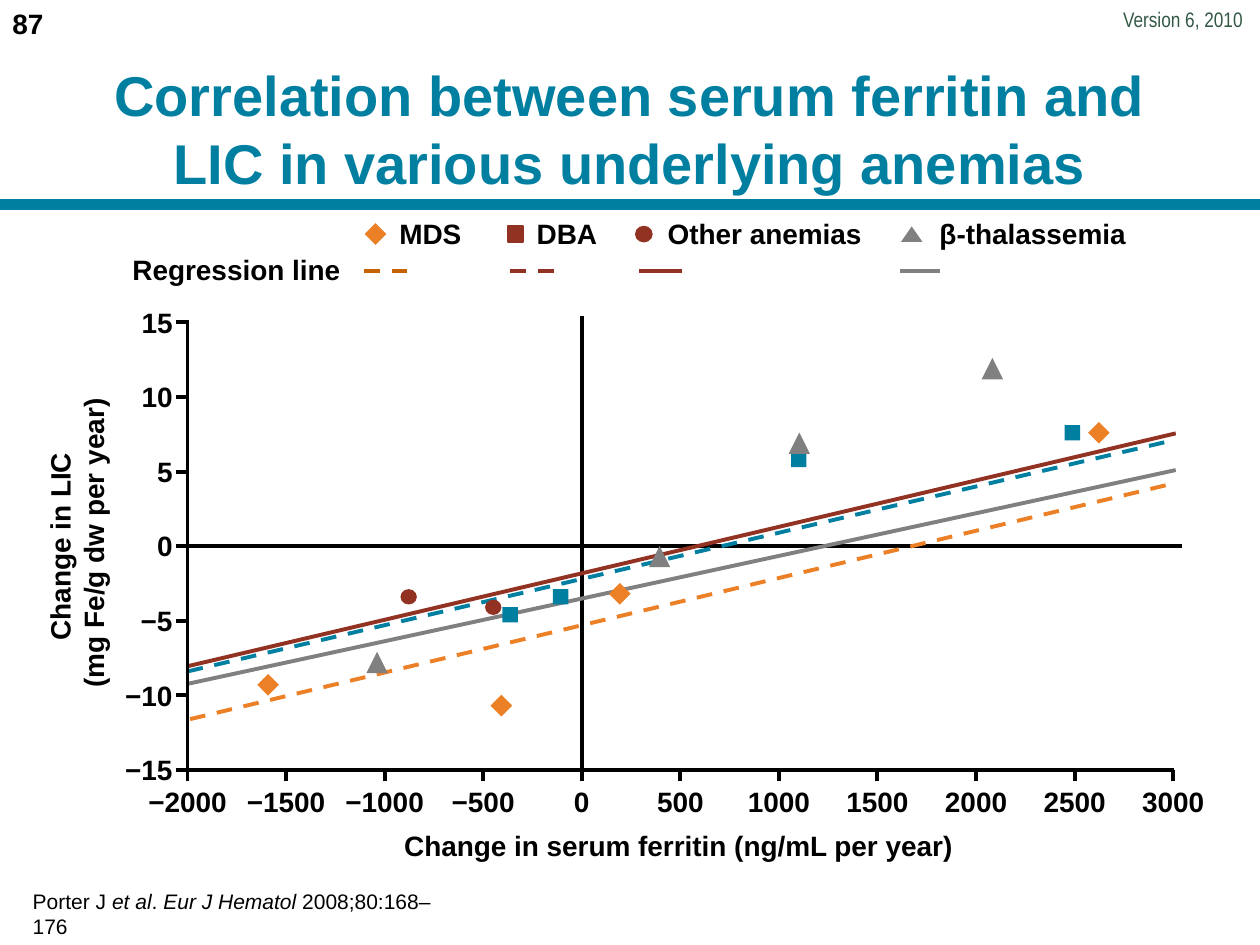
"""Build a slide relating changes in serum ferritin and LIC across anemias."""
import pptx
import pptx.util
from pptx.dml.color import RGBColor
from pptx.enum.dml import MSO_LINE
from pptx.enum.shapes import MSO_CONNECTOR, MSO_SHAPE
from pptx.enum.text import MSO_ANCHOR, MSO_AUTO_SIZE, PP_ALIGN
from pptx.oxml import parse_xml

Cm, Pt = pptx.util.Cm, pptx.util.Pt

TEAL = RGBColor(0x00, 0x7F, 0xA1)
ORANGE = RGBColor(0xEC, 0x80, 0x26)
OCHRE = RGBColor(0xC6, 0x62, 0x00)
BROWN = RGBColor(0x92, 0x32, 0x22)
GRAY = RGBColor(0x80, 0x80, 0x80)
GREEN = RGBColor(0x32, 0x58, 0x44)
BLACK = RGBColor(0, 0, 0)
EFFECT_LIST = '<a:effectLst xmlns:a="http://schemas.openxmlformats.org/drawingml/2006/main"/>'

TITLE = "Correlation between serum ferritin and LIC in various underlying anemias"
CITATION = [("Porter J ", False), ("et al", True), (". ", False),
            ("Eur J Hematol", True), (" 2008;80:168–176", False)]

LEFT, RIGHT, TOP, BOTTOM = 3.78, 23.65, 6.5, 15.52
FERRITIN_MIN, FERRITIN_MAX, FERRITIN_STEP = -2000, 3000, 500
LIC_MIN, LIC_MAX, LIC_STEP = -15, 15, 5
TICK = 0.23
LABEL_HEIGHT = 0.69

MARKERS = {
    "DBA": (MSO_SHAPE.RECTANGLE, 0.31, 0.31, 0),
    "thalassemia": (MSO_SHAPE.ISOSCELES_TRIANGLE, 0.43, 0.43, 0),
    "MDS": (MSO_SHAPE.RECTANGLE, 0.31, 0.31, 45),
    "other": (MSO_SHAPE.OVAL, 0.33, 0.31, 0),
}
REGRESSIONS = [
    ((-2000, -8.4), (3000, 7.1), TEAL, True),
    ((-1987, -11.6), (3000, 4.2), ORANGE, True),
    ((-2006, -8.07), (3013, 7.56), BROWN, False),
    ((-2006, -9.25), (3013, 5.1), GRAY, False),
]
POINTS = [
    ("DBA", TEAL, [(-363, -4.6), (-107, -3.4), (1101, 5.8), (2489, 7.6)]),
    ("thalassemia", GRAY, [(2083, 11.9), (1104, 6.9), (395, -0.7), (-1038, -7.8)]),
    ("MDS", ORANGE, [(193, -3.2), (-408, -10.7), (-1591, -9.3), (2623, 7.6)]),
    ("other", BROWN, [(-878, -3.4), (-449, -4.1)]),
]
LEGEND_MARKER_Y, LEGEND_LABEL_TOP, LEGEND_LINE_Y = 4.72, 4.25, 5.46
LEGEND = [
    ("MDS", "MDS", 7.57, ORANGE, 0, 7.8, 2.2, (7.34, 8.43), OCHRE, True),
    ("DBA", "DBA", 10.39, BROWN, 1.25, 10.57, 2.2, (10.29, 11.38), BROWN, True),
    ("other", "Other anemias", 12.98, BROWN, 0.75, 13.21, 4.8, (12.88, 13.74), BROWN, False),
    ("thalassemia", "β-thalassemia", 18.38, GRAY, 0, 18.69, 4.8, (18.14, 18.95), GRAY, False),
]


def x_of(ferritin):
    return LEFT + (ferritin - FERRITIN_MIN) / (FERRITIN_MAX - FERRITIN_MIN) * (RIGHT - LEFT)


def y_of(lic):
    return BOTTOM - (lic - LIC_MIN) / (LIC_MAX - LIC_MIN) * (BOTTOM - TOP)


def signed(value):
    return str(value).replace("-", "−")


def add_line(slide, start, end, color=BLACK, dashed=False, width=2.25):
    line = slide.shapes.add_connector(
        MSO_CONNECTOR.STRAIGHT, *(Cm(length) for length in (*start, *end)))
    line.line.color.rgb = color
    line.line.width = Pt(width)
    if dashed:
        line.line.dash_style = MSO_LINE.DASH
    line._element.spPr.append(parse_xml(EFFECT_LIST))


def add_marker(slide, kind, x, y, color, outline=0, height=None):
    preset, width, full_height, rotation = MARKERS[kind]
    height = height or full_height
    shape = slide.shapes.add_shape(
        preset, Cm(x - width / 2), Cm(y - height / 2), Cm(width), Cm(height))
    shape.rotation = rotation
    shape.shadow.inherit = False
    shape.fill.solid()
    shape.fill.fore_color.rgb = color
    if outline:
        shape.line.color.rgb = color
        shape.line.width = Pt(outline)
    else:
        shape.line.fill.background()


def style(paragraph, size, color=BLACK, bold=True, align=PP_ALIGN.LEFT, font="Arial"):
    paragraph.alignment = align
    paragraph.font.name = font
    paragraph.font.size = Pt(size)
    paragraph.font.bold = bold
    paragraph.font.color.rgb = color


def clear_margins(frame):
    frame.margin_left = frame.margin_right = frame.margin_top = frame.margin_bottom = 0


def add_text(slide, box, text, size=16, wrap=True, inset=True, **formatting):
    shape = slide.shapes.add_textbox(*(Cm(length) for length in box))
    frame = shape.text_frame
    frame.word_wrap = wrap
    if not inset:
        clear_margins(frame)
    paragraph = frame.paragraphs[0]
    if isinstance(text, str):
        paragraph.text = text
    else:
        for words, italic in text:
            run = paragraph.add_run()
            run.text = words
            run.font.italic = italic
    style(paragraph, size, **formatting)
    return shape


def add_title(slide):
    title = slide.shapes.title
    title.left, title.top, title.width, title.height = Cm(1.27), Cm(0.76), Cm(22.86), Cm(3.18)
    frame = title.text_frame
    frame.text = TITLE
    frame.auto_size = MSO_AUTO_SIZE.NONE
    frame.vertical_anchor = MSO_ANCHOR.BOTTOM
    clear_margins(frame)
    frame.paragraphs[0].line_spacing = 1.0
    style(frame.paragraphs[0], 32, TEAL, align=PP_ALIGN.CENTER)


def add_plot(slide):
    add_line(slide, (3.71, y_of(0)), (23.83, y_of(0)))
    add_line(slide, (x_of(0), 6.38), (x_of(0), 15.65))
    for start, end, color, dashed in REGRESSIONS:
        add_line(slide, *((x_of(x), y_of(y)) for x, y in (start, end)), color, dashed)
    for kind, color, values in POINTS:
        for ferritin, lic in values:
            add_marker(slide, kind, x_of(ferritin), y_of(lic), color)


def add_axes(slide):
    add_line(slide, (LEFT, 6.45), (LEFT, BOTTOM))
    add_line(slide, (LEFT, BOTTOM), (23.67, BOTTOM))
    for lic in range(LIC_MIN, LIC_MAX + 1, LIC_STEP):
        y = y_of(lic)
        add_line(slide, (LEFT - TICK, y), (LEFT, y))
        add_text(slide, (2.48, y - LABEL_HEIGHT / 2, 1, LABEL_HEIGHT), signed(lic),
                 wrap=False, inset=False, align=PP_ALIGN.RIGHT)
    for ferritin in range(FERRITIN_MIN, FERRITIN_MAX + 1, FERRITIN_STEP):
        x = x_of(ferritin)
        add_line(slide, (x, BOTTOM + TICK), (x, BOTTOM))
        add_text(slide, (x - 0.8, 15.82, 1.6, LABEL_HEIGHT), signed(ferritin),
                 wrap=False, inset=False, align=PP_ALIGN.CENTER)
    lic_label = add_text(slide, (-3.53, 10.13, 10.16, 1.63),
                         "Change in LIC \v(mg Fe/g dw per year)", align=PP_ALIGN.CENTER)
    lic_label.rotation = 270
    add_text(slide, (7.68, 16.58, 12, 0.94), "Change in serum ferritin (ng/mL per year)",
             align=PP_ALIGN.CENTER)


def add_legend(slide):
    add_text(slide, (2.42, 4.97, 4.9, 0.94), "Regression line")
    for kind, label, x, color, outline, left, width, ends, line_color, dashed in LEGEND:
        add_marker(slide, kind, x, LEGEND_MARKER_Y, color, outline, height=0.31)
        add_text(slide, (left, LEGEND_LABEL_TOP, width, 0.94), label)
        add_line(slide, *((end, LEGEND_LINE_Y) for end in ends), line_color, dashed)


def main():
    presentation = pptx.Presentation()
    presentation.slide_width, presentation.slide_height = Cm(25.4), Cm(19.05)
    slide = presentation.slides.add_slide(presentation.slide_layouts[5])
    add_text(slide, (22.35, 0, 3.05, 0.76), "Version 6, 2010 ", 12, wrap=False,
             color=GREEN, bold=False, align=PP_ALIGN.RIGHT, font="Arial Narrow")
    add_text(slide, (0, 0, 5.92, 1.32), "87")
    add_line(slide, (0, 4.12), (25.4, 4.12), TEAL, width=6)
    add_title(slide)
    add_plot(slide)
    add_axes(slide)
    add_legend(slide)
    add_text(slide, (0.41, 17.78, 9.22, 0.76), CITATION, 12, bold=False)
    presentation.save("out.pptx")


if __name__ == "__main__":
    main()
